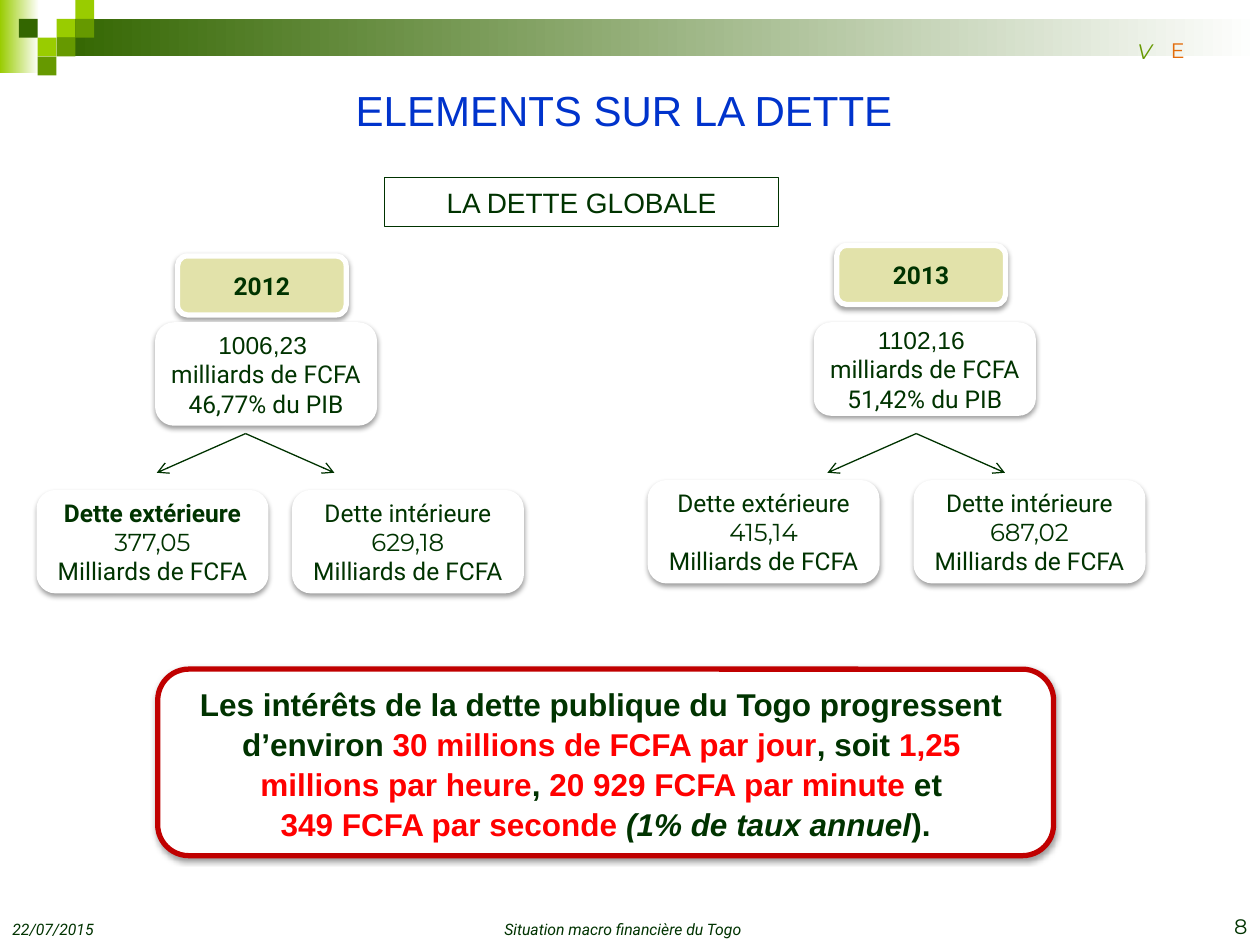
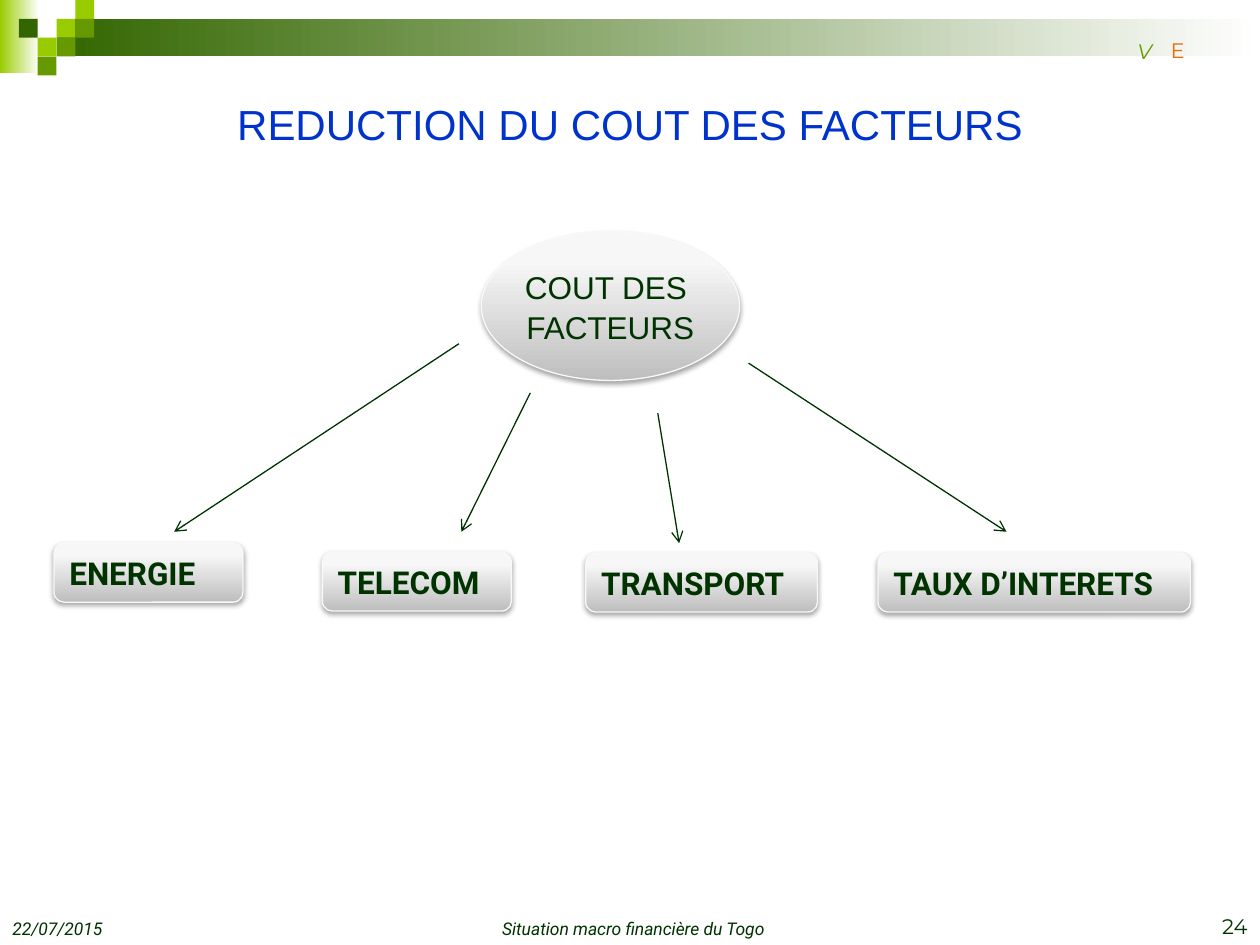
"""Build two slides on the public debt of Togo and the cost of production factors."""
import pptx
import pptx.util
import pptx.dml.color
import pptx.enum.shapes
import pptx.enum.text
import pptx.oxml.ns
import lxml.etree

Cm, Pt, qn = pptx.util.Cm, pptx.util.Pt, pptx.oxml.ns.qn
SHAPE = pptx.enum.shapes.MSO_SHAPE
ALIGN = pptx.enum.text.PP_ALIGN
ANCHOR = pptx.enum.text.MSO_ANCHOR

INK, BLUE, RED, WHITE = "003300", "0033CC", "FF0000", "FFFFFF"
DARK, MID, LIME, ORANGE = "336600", "669900", "99CC00", "E36C0A"
SAND, CRIMSON, RIM = "E2E2AA", "C00000", "F9F9F9"
SILVER = [(0, "BEBEBE"), (80, "F7F7F7"), (100, "F8F8F8")]

UNIT = 0.38
SQUARES = [(3, 1, LIME), (4, 0, LIME), (4, 1, MID), (2, 2, LIME),
           (1, 1, DARK), (3, 2, MID), (2, 3, MID)]
DATE, SUBJECT = "22/07/2015", "Situation macro financière du Togo"

DEBTS = [
    {"year": "2012", "head": (3.58, 5.16), "total": (3.18, 6.55, 4.37, 1.98),
     "lines": ["1006,23 ", "milliards de FCFA", "46,77% du PIB"],
     "fork": 4.95, "parts_top": 9.93,
     "parts": [(0.79, "Dette extérieure", "377,05", True),
               (5.94, "Dette intérieure", "629,18", False)]},
    {"year": "2013", "head": (16.87, 4.95), "total": (16.46, 6.55, 4.37, 1.78),
     "lines": ["1102,16 ", "milliards de FCFA", "51,42% du PIB"],
     "fork": 18.47, "parts_top": 9.73,
     "parts": [(13.11, "Dette extérieure", "415,14", False),
               (18.47, "Dette intérieure", "687,02", False)]},
]
INTEREST = [
    [("Les intérêts de la dette publique du Togo progressent ", INK, False)],
    [("d’environ ", INK, False), ("30 millions de FCFA par jour", RED, False),
     (", soit ", INK, False), ("1,25 ", RED, False)],
    [("millions par heure", RED, False), (", ", INK, False),
     ("20 929 FCFA par minute ", RED, False), ("et ", INK, False)],
    [("349 FCFA par seconde ", RED, False), ("(1% de taux annuel", INK, True),
     (").", INK, False)],
]
FACTORS = [
    ("ENERGIE", (1.09, 10.95, 3.81, 1.19), (9.25, 6.93), (3.51, 10.72)),
    ("TELECOM", (6.5, 11.13, 3.81, 1.19), (10.69, 7.92), (9.3, 10.72)),
    ("TRANSPORT", (11.81, 11.15, 4.67, 1.19), (13.26, 8.33), (13.69, 10.95)),
    ("TAUX D’INTERETS", (17.7, 11.15, 6.3, 1.19), (15.09, 7.32), (20.29, 10.72)),
]


def rgb(color):
    return pptx.dml.color.RGBColor.from_string(color)


def set_fill(sp, fill, angle=0):
    if fill is None:
        sp.fill.background()
    elif isinstance(fill, str):
        sp.fill.solid()
        sp.fill.fore_color.rgb = rgb(fill)
    else:
        sp.fill.gradient()
        sp.fill.gradient_angle = angle
        stops = sp._element.spPr.find(".//" + qn("a:gsLst"))
        stops.clear()
        for pos, color in fill:
            gs = lxml.etree.SubElement(stops, qn("a:gs"), pos=str(pos * 1000))
            lxml.etree.SubElement(gs, qn("a:srgbClr"), val=color)


def add_box(slide, kind, box, fill, line=None, width=0.75, angle=0, shadow=0):
    sp = slide.shapes.add_shape(kind, *map(Cm, box))
    set_fill(sp, fill, angle)
    if line:
        sp.line.color.rgb = rgb(line)
        sp.line.width = Pt(width)
    else:
        sp.line.fill.background()
    sp.shadow.inherit = False
    if shadow:
        effects = sp._element.spPr.find(qn("a:effectLst"))
        outer = lxml.etree.SubElement(
            effects, qn("a:outerShdw"), blurRad=str(Pt(3.1)), dist=str(Pt(1.6)),
            dir="5400000", rotWithShape="0")
        color = lxml.etree.SubElement(outer, qn("a:srgbClr"), val="000000")
        lxml.etree.SubElement(color, qn("a:alpha"), val=str(shadow * 1000))
    return sp


def add_card(slide, box, fill=WHITE, line=WHITE):
    return add_box(slide, SHAPE.ROUNDED_RECTANGLE, box, fill, line, 3, shadow=38)


def add_silver(slide, kind, box):
    return add_box(slide, kind, box, SILVER, RIM, angle=90, shadow=35)


def write(sp, lines, size, font="Arial", color=INK, bold=False, italic=False,
          align=ALIGN.CENTER, anchor=ANCHOR.MIDDLE, wrap=False, spacing=None):
    tf = sp.text_frame
    tf.word_wrap = wrap
    tf.vertical_anchor = anchor
    for i, line in enumerate(lines):
        p = tf.paragraphs[0] if i == 0 else tf.add_paragraph()
        p.alignment = align
        p.line_spacing = spacing
        p.font.size, p.font.name = Pt(size), font
        p.font.bold, p.font.italic = bold, italic
        p.font.color.rgb = rgb(color)
        for text, run_color, run_italic in [(line, None, None)] if isinstance(line, str) else line:
            r = p.add_run()
            r.text = text
            if run_color:
                r.font.color.rgb = rgb(run_color)
                r.font.italic = run_italic
    return tf


def add_text(slide, box, text, size, **style):
    write(slide.shapes.add_textbox(*map(Cm, box)), [text], size, **style)


def add_arrow(slide, start, end):
    c = slide.shapes.add_connector(
        pptx.enum.shapes.MSO_CONNECTOR.STRAIGHT, *map(Cm, start + end))
    c.line.color.rgb = rgb(INK)
    c.line.width = Pt(0.75)
    sp_pr = c._element.spPr
    lxml.etree.SubElement(sp_pr.find(qn("a:ln")), qn("a:tailEnd"), type="arrow")
    lxml.etree.SubElement(sp_pr, qn("a:effectLst"))


def add_slide(prs, title, title_height, number, footer_left, footer_size):
    slide = prs.slides.add_slide(prs.slide_layouts[6])
    for box, color in [((0, 0, 0.79, 1.47), LIME),
                       ((3 * UNIT, UNIT, 25.4 - 3 * UNIT, 2 * UNIT), DARK)]:
        add_box(slide, SHAPE.RECTANGLE, box, [(0, color), (100, WHITE)])
    for col, row, color in SQUARES:
        add_box(slide, SHAPE.RECTANGLE, (col * UNIT, row * UNIT, UNIT, UNIT), color)
    add_text(slide, (1.27, 1.27, 22.86, title_height), title, 24, color=BLUE, wrap=True)
    footer = {"anchor": ANCHOR.BOTTOM, "wrap": True}
    add_text(slide, (footer_left, 17.78, 8.05, 1.27), SUBJECT, footer_size,
             font="Roboto", italic=True, **footer)
    add_text(slide, (19.48, 17.78, 5.92, 1.27), number, 12, font="Montserrat",
             align=ALIGN.RIGHT, **footer)
    add_text(slide, (0, 17.73, 5.92, 1.32), DATE, footer_size, font="Roboto",
             italic=True, align=ALIGN.LEFT, **footer)
    letter = {"font": "Montserrat", "anchor": ANCHOR.TOP}
    add_text(slide, (22.68, 0.66, 0.69, 0.41), "V", 12, color=MID, italic=True, **letter)
    add_text(slide, (23.37, 0.64, 0.48, 0.41), "E", 12, color=ORANGE, **letter)
    return slide


def add_debt(slide, debt):
    head = add_card(slide, debt["head"] + (3.4, 1.19), SAND)
    write(head, [debt["year"]], 14, "Roboto", bold=True)
    tf = write(add_card(slide, debt["total"]), debt["lines"], 14, "Roboto")
    tf.paragraphs[0].font.name = "Arial"
    for side, (left, label, amount, bold) in zip((-1, 1), debt["parts"]):
        add_arrow(slide, (debt["fork"], 8.74), (debt["fork"] + side * 1.79, 9.53))
        part = add_card(slide, (left, debt["parts_top"], 4.57, 1.98))
        tf = write(part, [label, amount, "Milliards de FCFA"], 14, "Roboto")
        tf.paragraphs[0].font.bold = bold
        tf.paragraphs[1].font.name = "Montserrat"


def main():
    prs = pptx.Presentation()
    prs.slide_width, prs.slide_height = Cm(25.4), Cm(19.05)

    slide = add_slide(prs, "ELEMENTS SUR LA DETTE ", 1.9, "8", 8.53, 9)
    heading = add_box(slide, SHAPE.RECTANGLE, (7.75, 3.58, 7.95, 0.99), None, INK)
    write(heading, ["LA DETTE GLOBALE"], 16)
    for debt in DEBTS:
        add_debt(slide, debt)
    interest = add_card(slide, (3.18, 13.49, 18.06, 3.76), line=CRIMSON)
    write(interest, INTEREST, 18, bold=True, spacing=1.06)

    slide = add_slide(prs, "REDUCTION DU COUT DES FACTEURS", 2.46, "24", 8.74, 10)
    hub = add_silver(slide, SHAPE.OVAL, (9.7, 4.67, 5.21, 3))
    write(hub, ["COUT DES ", "FACTEURS"], 18, spacing=1.06)
    for name, box, start, end in FACTORS:
        factor = add_silver(slide, SHAPE.ROUNDED_RECTANGLE, box)
        write(factor, [name], 18, "Roboto", bold=True, align=ALIGN.LEFT, wrap=True)
        add_arrow(slide, start, end)

    prs.save("out.pptx")


if __name__ == "__main__":
    main()
